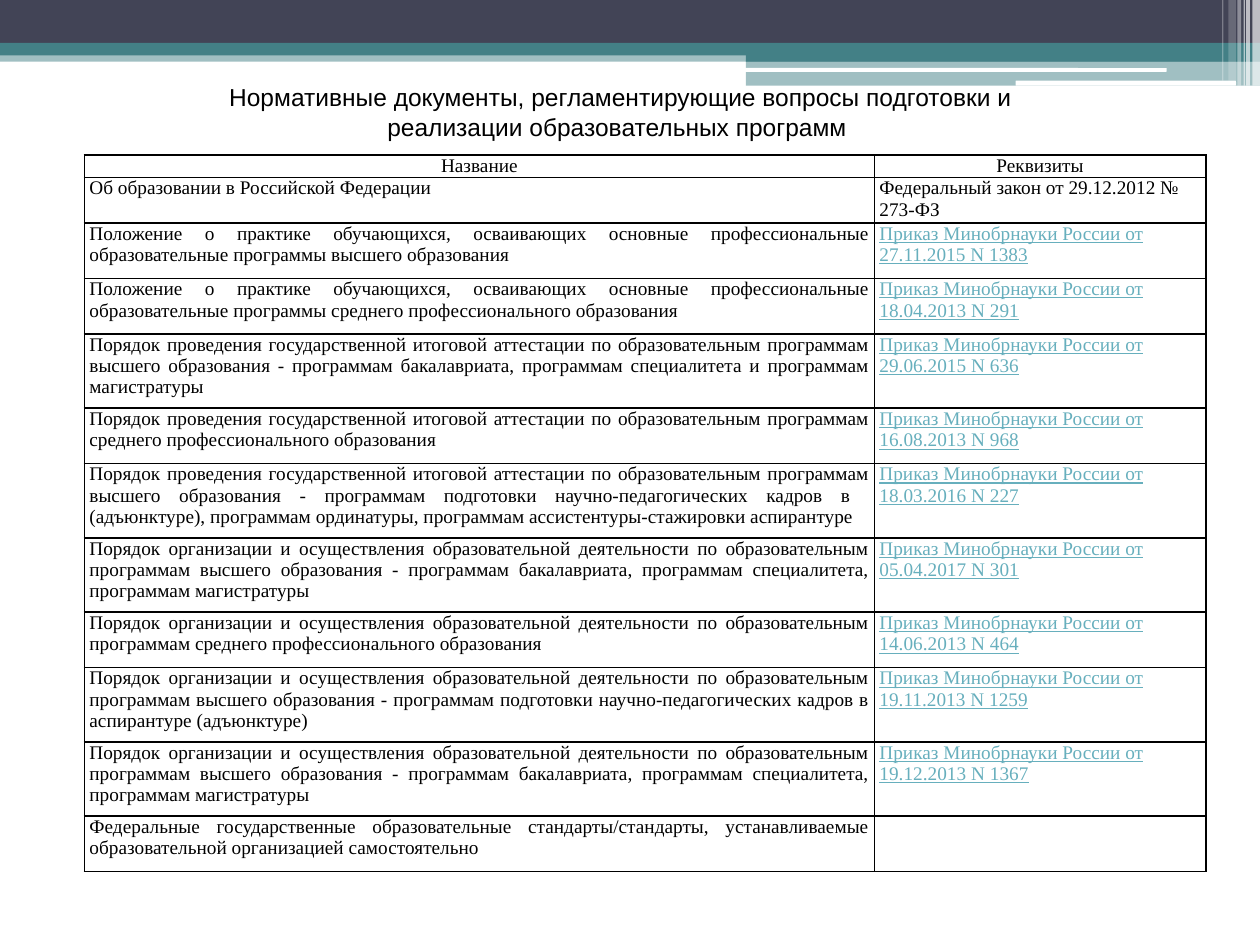
import dataclasses

import lxml.etree
import pptx
import pptx.dml.color
import pptx.enum.shapes
import pptx.enum.text
import pptx.oxml.ns
import pptx.util

Inches = pptx.util.Inches
Align = pptx.enum.text.PP_ALIGN
Anchor = pptx.enum.text.MSO_ANCHOR
Shape = pptx.enum.shapes.MSO_SHAPE


@dataclasses.dataclass(frozen=True)
class Theme:
    dark: str = "424456"
    teal: str = "438086"
    white: str = "FFFFFF"
    ink: str = "000000"
    link: str = "67AFBD"
    title_font: str = "Arial"
    table_font: str = "Times New Roman"
    title_size: int = 14
    table_size: int = 11
    border: int = 1


THEME = Theme()

TITLE = "Нормативные документы, регламентирующие вопросы подготовки и реализации образовательных программ "
HEADER = ("Название", "Реквизиты")
PRACTICE = "Положение о практике обучающихся, осваивающих основные профессиональные образовательные программы "
EXAMS = "Порядок проведения государственной итоговой аттестации по образовательным программам "
TEACHING = "Порядок организации и осуществления образовательной деятельности по образовательным программам "
HIGHER = "высшего образования"
SECONDARY = "среднего профессионального образования"
BACHELOR = HIGHER + " - программам бакалавриата, программам специалитета"
STAFF = HIGHER + " - программам подготовки научно-педагогических кадров в "
ORDER = "Приказ Минобрнауки России от "

# Document name, reference, row height
DOCUMENTS = [
    ("Об образовании в Российской Федерации", "Федеральный закон от 29.12.2012 № 273-ФЗ", 0.36),
    (PRACTICE + HIGHER, ORDER + "27.11.2015 N 1383", 0.44),
    (PRACTICE + SECONDARY, ORDER + "18.04.2013 N 291", 0.44),
    (EXAMS + BACHELOR + " и программам магистратуры", ORDER + "29.06.2015 N 636", 0.59),
    (EXAMS + SECONDARY, ORDER + "16.08.2013 N 968", 0.44),
    (EXAMS + STAFF + " (адъюнктуре), программам ординатуры, программам ассистентуры-стажировки аспирантуре",
     ORDER + "18.03.2016 N 227", 0.59),
    (TEACHING + BACHELOR + ", программам магистратуры", ORDER + "05.04.2017 N 301", 0.59),
    (TEACHING + SECONDARY, ORDER + "14.06.2013 N 464", 0.44),
    (TEACHING + STAFF + "аспирантуре (адъюнктуре)", ORDER + "19.11.2013 N 1259", 0.59),
    (TEACHING + BACHELOR + ", программам магистратуры", ORDER + "19.12.2013 N 1367", 0.59),
    ("Федеральные государственные образовательные стандарты/стандарты, "
     "устанавливаемые образовательной организацией самостоятельно", "", 0.44),
]

# Left, top, width, height, colour, opacity in percent
BANDS = [
    (0, 0.4, 10, 0.09, THEME.teal, 50),
    (0, 0, 10, 0.34, THEME.dark, 100),
    (0, 0.34, 10, 0.1, THEME.teal, 100),
    (5.92, 0.39, 4.08, 0.1, THEME.teal, 100),
    (5.92, 0.48, 4.08, 0.2, THEME.teal, 50),
]
ROUNDED_BANDS = [
    (5.91, 0.54, 3.35, 0.03, THEME.white, 100),
    (8.06, 0.64, 1.75, 0.04, THEME.white, 100),
]
# Left, width, height, opacity in percent
STRIPES = [
    (9.94, 0.06, 0.68, 65),
    (9.89, 0.03, 0.68, 65),
    (9.87, 0.01, 0.68, 60),
    (9.82, 0.03, 0.68, 40),
    (9.75, 0.06, 0.64, 20),
    (9.7, 0.01, 0.64, 30),
]


def rgb(colour):
    return pptx.dml.color.RGBColor.from_string(colour)


def set_values(target, values):
    for name, value in values.items():
        setattr(target, name, value)


def add_child(parent, tag, **attributes):
    return lxml.etree.SubElement(parent, pptx.oxml.ns.qn(tag), attributes)


def write_text(para, text, align, font, size, colour, underline=False):
    para.alignment = align
    span = para.add_run()
    span.text = text
    set_values(span.font, {"name": font, "size": pptx.util.Pt(size),
                           "bold": False, "underline": underline})
    span.font.color.rgb = rgb(colour)


def add_band(page, kind, box, colour, opacity):
    band = page.shapes.add_shape(kind, *map(Inches, box))
    band.shadow.inherit = False
    band.line.fill.background()
    band.fill.solid()
    band.fill.fore_color.rgb = rgb(colour)
    if opacity < 100:
        tint = band.fill._xPr.find(".//" + pptx.oxml.ns.qn("a:srgbClr"))
        add_child(tint, "a:alpha", val=str(opacity * 1000))


def add_banner(page, left, top):
    """Draw the coloured bands and the fading stripes at the right edge."""
    stripes = [(x, 0, width, height, THEME.white, opacity) for x, width, height, opacity in STRIPES]
    layers = ((Shape.RECTANGLE, BANDS), (Shape.ROUNDED_RECTANGLE, ROUNDED_BANDS),
              (Shape.RECTANGLE, stripes))
    for kind, bands in layers:
        for x, y, width, height, colour, opacity in bands:
            add_band(page, kind, (left + x, top + y, width, height), colour, opacity)


def place_title(page, left, top, width, height):
    title = page.shapes.title
    set_values(title, {"left": Inches(left), "top": Inches(top),
                       "width": Inches(width), "height": Inches(height)})
    set_values(title.text_frame, {"word_wrap": True, "vertical_anchor": Anchor.MIDDLE,
                                  "auto_size": pptx.enum.text.MSO_AUTO_SIZE.NONE})
    write_text(title.text_frame.paragraphs[0], TITLE, Align.CENTER,
               THEME.title_font, THEME.title_size, THEME.ink)
    # Bring the title in front of the banner
    title.element.getparent().append(title.element)


def format_cell(cell):
    set_values(cell, {"margin_left": Inches(0.04), "margin_right": Inches(0.04),
                      "margin_top": 0, "margin_bottom": 0, "vertical_anchor": Anchor.TOP})
    properties = cell._tc.get_or_add_tcPr()
    for side in ("a:lnL", "a:lnR", "a:lnT", "a:lnB"):
        line = add_child(properties, side, w=str(pptx.util.Pt(THEME.border)))
        add_child(add_child(line, "a:solidFill"), "a:srgbClr", val=THEME.ink)
    cell.fill.background()


def add_documents(page, left, top, widths):
    rows = [(*HEADER, 0.18), *DOCUMENTS]
    height = sum(row[2] for row in rows)
    box = map(Inches, (left, top, sum(widths), height))
    table = page.shapes.add_table(len(rows), len(widths), *box).table
    set_values(table, {"first_row": False, "horz_banding": False})
    for column, width in zip(table.columns, widths):
        column.width = Inches(width)
    for index, (name, reference, row_height) in enumerate(rows):
        table.rows[index].height = Inches(row_height)
        for column, (text, align) in enumerate(((name, Align.JUSTIFY), (reference, Align.LEFT))):
            cell = table.cell(index, column)
            format_cell(cell)
            if text:
                linked = text.startswith(ORDER)
                write_text(cell.text_frame.paragraphs[0], text,
                           align if index else Align.CENTER,
                           THEME.table_font, THEME.table_size,
                           THEME.link if linked else THEME.ink, linked)


def main():
    deck = pptx.Presentation()
    set_values(deck, {"slide_width": Inches(10), "slide_height": Inches(7.5)})
    page = deck.slides.add_slide(deck.slide_layouts.get_by_name("Title Only"))
    add_banner(page, 0, 0)
    add_documents(page, 0.67, 1.23, (6.27, 2.63))
    place_title(page, 1.46, 0.6, 6.93, 0.57)
    deck.save("out.pptx")


if __name__ == "__main__":
    main()
